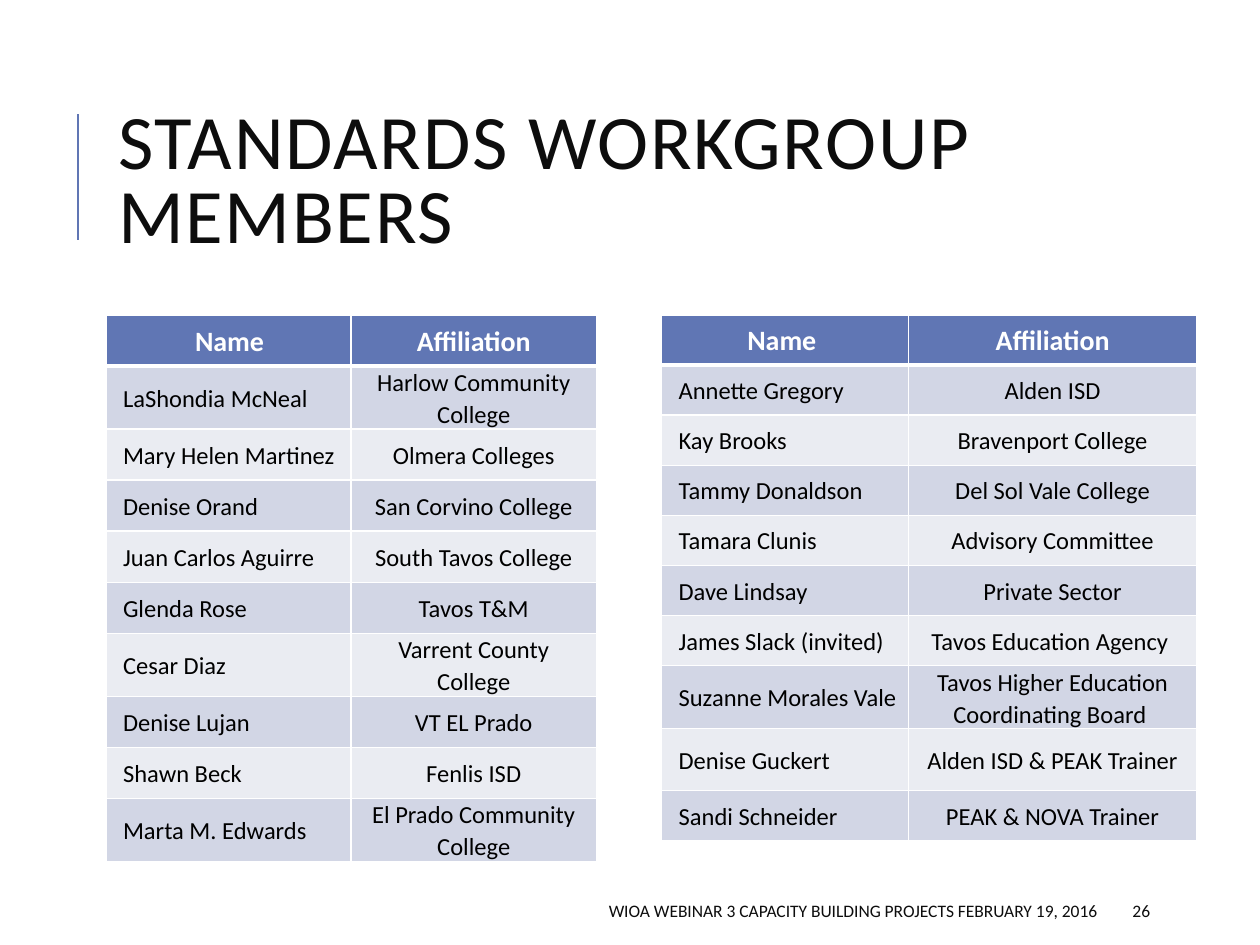
"""Build the slide listing the members of the standards workgroup."""
from lxml import etree
from pptx import Presentation
from pptx import util as u
from pptx.dml.color import RGBColor
from pptx.enum import shapes, text
from pptx.oxml.ns import qn

BLUE, INK, WHITE = "6076B4", "0D0D0D", "FFFFFF"
BANDS = ["D2D6E5", "EAECF2"]


def paint(color_format, color):
    color_format.rgb = RGBColor.from_string(color)


def write(frame, words, size, color, align, bold=False):
    frame.word_wrap = True
    frame.vertical_anchor = text.MSO_ANCHOR.MIDDLE
    line = frame.paragraphs[0]
    line.text = words
    line.alignment = align
    line.font.name = "Calibri"
    line.font.size = u.Pt(size)
    line.font.bold = bold
    paint(line.font.color, color)
    return line


left_members = [
    ("LaShondia McNeal", "Harlow Community College"),
    ("Mary Helen Martinez", "Olmera Colleges"),
    ("Denise Orand", "San Corvino College"),
    ("Juan Carlos Aguirre", "South Tavos College"),
    ("Glenda Rose", "Tavos T&M"),
    ("Cesar Diaz", "Varrent County College"),
    ("Denise Lujan", "VT EL Prado"),
    ("Shawn Beck", "Fenlis ISD"),
    ("Marta M. Edwards", "El Prado Community College"),
]
right_members = [
    ("Annette Gregory", "Alden ISD"),
    ("Kay Brooks", "Bravenport College"),
    ("Tammy Donaldson", "Del Sol Vale College"),
    ("Tamara Clunis", "Advisory Committee"),
    ("Dave Lindsay", "Private Sector"),
    ("James Slack (invited)", "Tavos Education Agency "),
    ("Suzanne Morales Vale", "Tavos Higher Education Coordinating Board "),
    ("Denise Guckert", "Alden ISD & PEAK Trainer"),
    ("Sandi Schneider", "PEAK & NOVA Trainer"),
]
rosters = [
    (2.14, [4.94, 4.94], [1.03] * 10, left_members),
    (13.34, [4.97, 5.82], [1.01] * 8 + [1.25, 1.01], right_members),
]

deck = Presentation()
deck.slide_width, deck.slide_height = u.Cm(25.4), u.Cm(19.05)
slide = deck.slides.add_slide(deck.slide_layouts[6])

accent = slide.shapes.add_connector(
    shapes.MSO_CONNECTOR.STRAIGHT, u.Cm(1.57), u.Cm(4.83), u.Cm(1.57), u.Cm(2.29))
accent.line.width = u.Pt(1.5)
paint(accent.line.color, BLUE)
etree.SubElement(accent._element.spPr, qn("a:effectLst"))

labels = [
    (2.13, 1.63, 20.24, 4.17, "STANDARDS WORKGROUP MEMBERS", 44, text.PP_ALIGN.LEFT),
    (10.08, 17.98, 12.29, 0.76,
     "WIOA WEBINAR 3 CAPACITY BUILDING PROJECTS FEBRUARY 19, 2016", 10, text.PP_ALIGN.RIGHT),
    (22.58, 17.98, 2.03, 0.76, "26", 10, text.PP_ALIGN.LEFT),
]
for left, top, width, height, words, size, align in labels:
    label = slide.shapes.add_textbox(u.Cm(left), u.Cm(top), u.Cm(width), u.Cm(height))
    line = write(label.text_frame, words, size, INK, align)
    if size == 44:
        line.line_spacing = 0.8
        line.runs[0].font._element.set("spc", "100")

for left, widths, heights, members in rosters:
    roster = slide.shapes.add_table(
        len(heights), len(widths), u.Cm(left), u.Cm(6.35),
        u.Cm(sum(widths)), u.Cm(sum(heights))).table
    for column, width in zip(roster.columns, widths):
        column.width = u.Cm(width)
    for row, height in zip(roster.rows, heights):
        row.height = u.Cm(height)
    for r, entry in enumerate([("Name ", "Affiliation")] + members):
        header = r == 0
        for c, words in enumerate(entry):
            cell = roster.cell(r, c)
            cell.margin_left = cell.margin_right = u.Cm(0.1 if header else 0.18)
            cell.margin_top = cell.margin_bottom = 0
            centred = header or c == 1
            line = write(cell.text_frame, words, 16 if header else 14,
                         WHITE if header else "000000",
                         text.PP_ALIGN.CENTER if centred else text.PP_ALIGN.LEFT, header)
            cell.vertical_anchor = text.MSO_ANCHOR.MIDDLE
            line.line_spacing = 1.07
            if c == 1:
                line.space_after = u.Pt(8)
            elif not header or members is left_members:
                line._p.get_or_add_pPr().set("marL", str(u.Cm(0.16)))
            for side in ("L", "R", "T", "B"):
                thick = (header and side == "B") or (r == 1 and side == "T")
                edge = etree.SubElement(cell._tc.get_or_add_tcPr(), qn("a:ln" + side),
                                        w=str(u.Pt(3 if thick else 1)))
                fill = etree.SubElement(edge, qn("a:solidFill"))
                etree.SubElement(fill, qn("a:srgbClr"), val=WHITE)
            cell.fill.solid()
            paint(cell.fill.fore_color, BLUE if header else BANDS[(r - 1) % 2])

deck.save("out.pptx")
